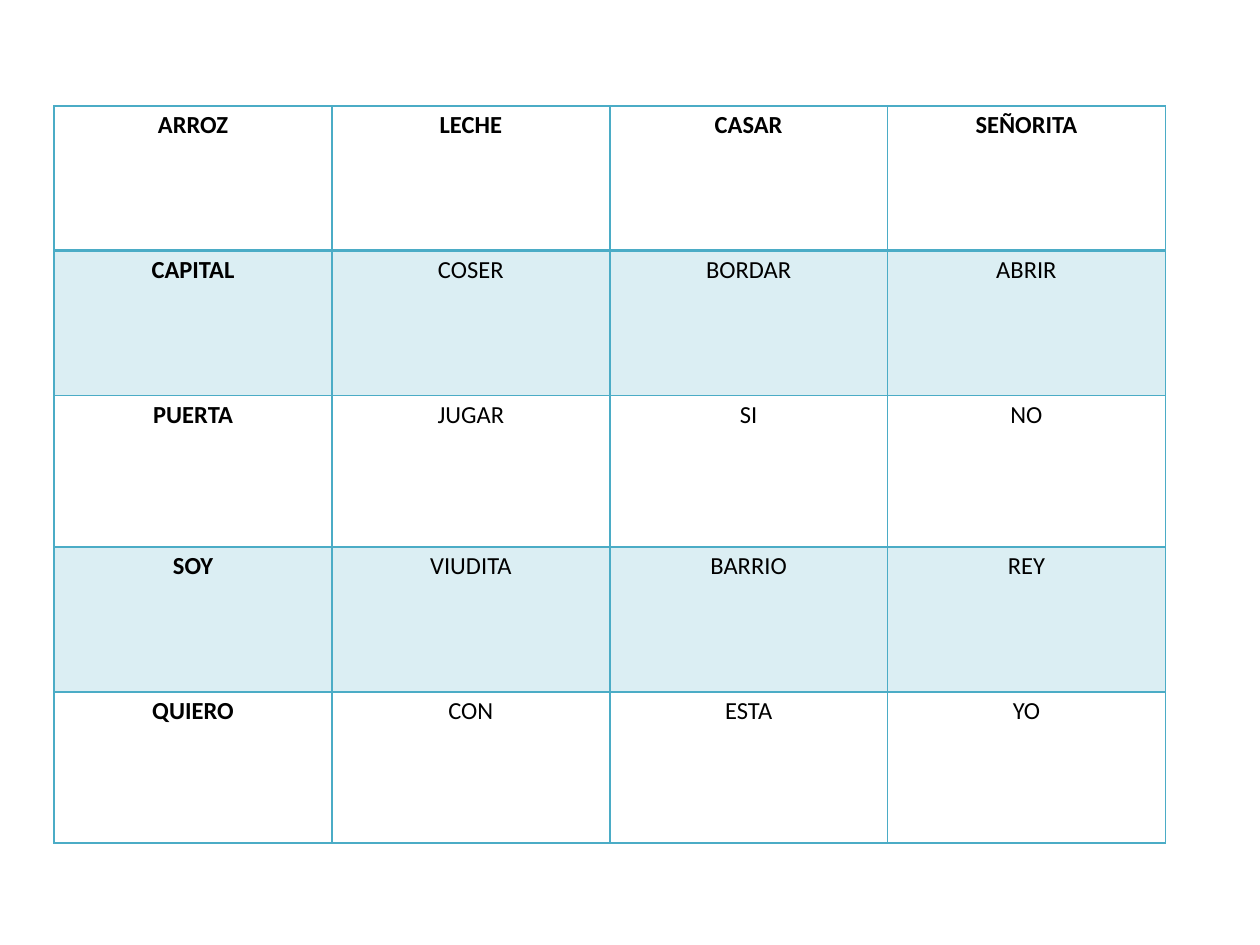
import pptx
import pptx.util
import pptx.dml.color
import pptx.enum.text
import pptx.oxml.ns
import lxml.etree

WORDS = [
    ["ARROZ", "LECHE", "CASAR", "SEÑORITA"],
    ["CAPITAL", "COSER", "BORDAR", "ABRIR"],
    ["PUERTA", "JUGAR", "SI", "NO"],
    ["SOY", "VIUDITA", "BARRIO", "REY"],
    ["QUIERO", "CON", "ESTA", "YO"],
]
HEIGHTS = [1.15, 1.15, 1.2, 1.15, 1.2]
LEFT, TOP, WIDTH = 0.43, 0.84, 8.82
TEAL = pptx.dml.color.RGBColor(0x4B, 0xAC, 0xC6)
BLACK = pptx.dml.color.RGBColor(0, 0, 0)
Inches, Pt = pptx.util.Inches, pptx.util.Pt
qn = pptx.oxml.ns.qn


def tint(cell):
    """Fill a cell with teal at 20 % opacity."""
    cell.fill.solid()
    cell.fill.fore_color.rgb = TEAL
    color = next(cell._tc.tcPr.iter(qn("a:srgbClr")))
    lxml.etree.SubElement(color, qn("a:alpha")).set("val", "20000")


def frame(cell, sides):
    """Draw borders; they must come before the fill in the cell."""
    props = cell._tc.get_or_add_tcPr()
    for spot, (side, width) in enumerate(sides.items()):
        line = lxml.etree.Element(qn(f"a:ln{side}"), w=str(Pt(width)))
        paint = lxml.etree.SubElement(line, qn("a:solidFill"))
        lxml.etree.SubElement(paint, qn("a:srgbClr")).set("val", str(TEAL))
        props.insert(spot, line)


def write(cell, word, bold):
    cell.margin_left = cell.margin_right = Inches(0.06)
    cell.margin_top = cell.margin_bottom = 0
    cell.text_frame.text = word
    para = cell.text_frame.paragraphs[0]
    para.alignment = pptx.enum.text.PP_ALIGN.CENTER
    para.line_spacing = 1.15
    font = para.runs[0].font
    font.name, font.size, font.bold = "Calibri", Pt(14), bold
    font.color.rgb = BLACK


deck = pptx.Presentation()
deck.slide_width, deck.slide_height = Inches(10), Inches(7.5)
slide = deck.slides.add_slide(deck.slide_layouts[6])

# Word grid
rows, cols = len(WORDS), len(WORDS[0])
grid = slide.shapes.add_table(
    rows, cols, Inches(LEFT), Inches(TOP), Inches(WIDTH), Inches(sum(HEIGHTS))
).table
grid.horz_banding = False
for col in grid.columns:
    col.width = Inches(WIDTH / cols)

# Cells: bold first row and column, tinted odd rows, thick rule under the head
for r, words in enumerate(WORDS):
    grid.rows[r].height = Inches(HEIGHTS[r])
    for c, word in enumerate(words):
        cell = grid.cell(r, c)
        write(cell, word, r == 0 or c == 0)
        if r % 2:
            tint(cell)
        else:
            cell.fill.background()
        frame(cell, {"L": 1, "R": 1, "T": 2 if r == 1 else 1, "B": 2 if r == 0 else 1})

deck.save("out.pptx")
